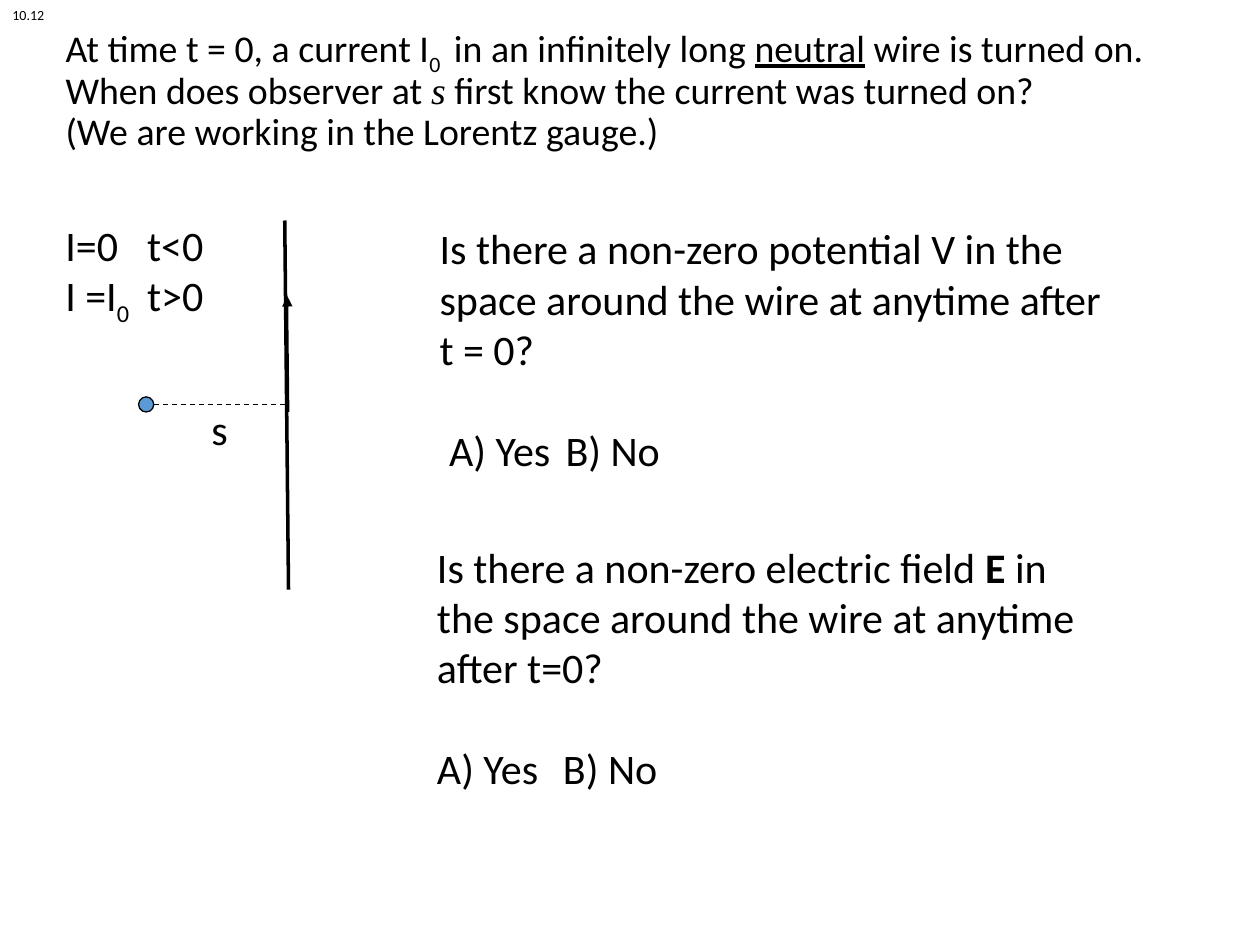
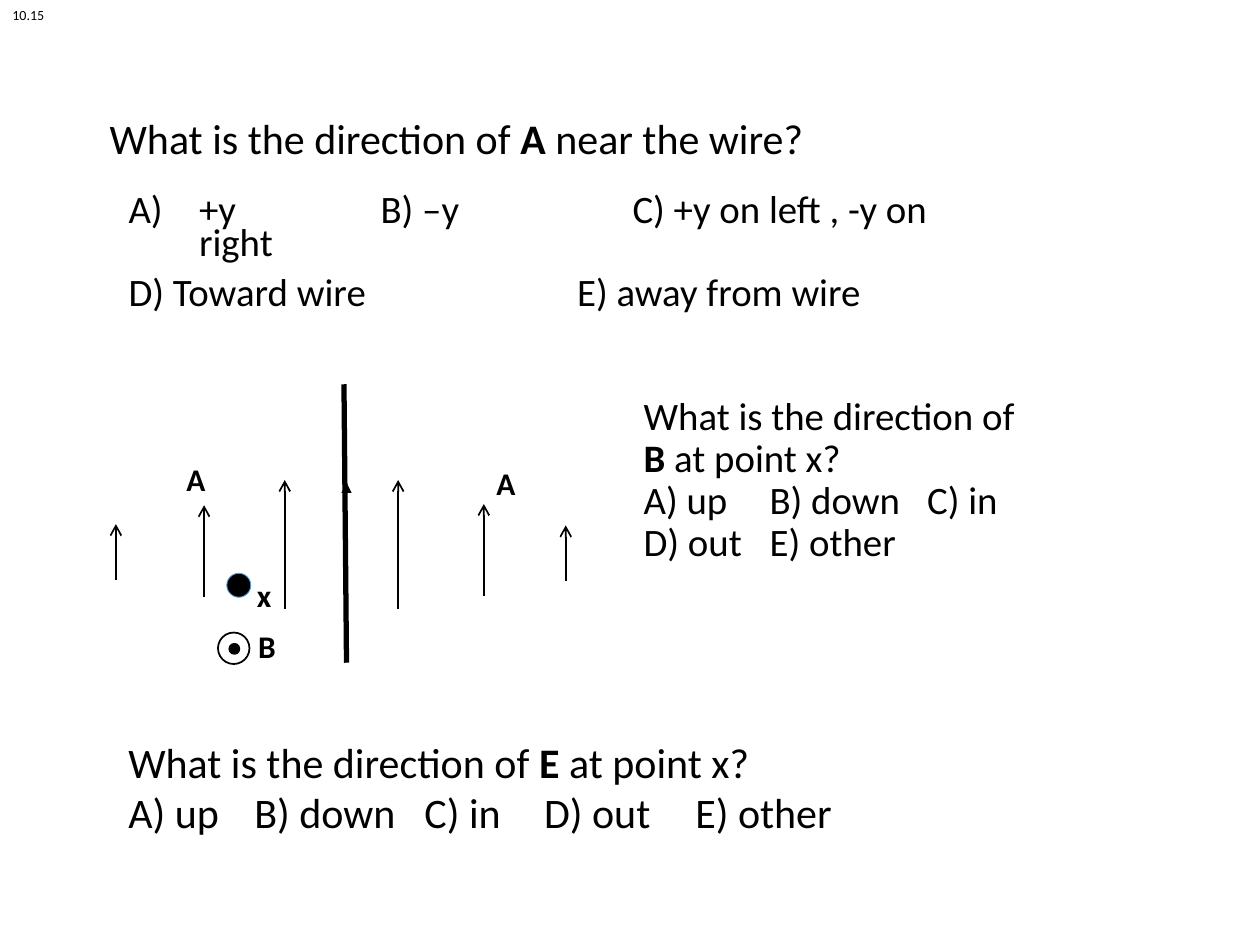
"""Build two physics concept questions about a current-carrying wire."""
from lxml.etree import SubElement
from pptx import Presentation
from pptx.dml.color import RGBColor
from pptx.enum.dml import MSO_LINE
from pptx.enum.shapes import MSO_CONNECTOR, MSO_SHAPE
from pptx.enum.text import MSO_ANCHOR, MSO_AUTO_SIZE, PP_ALIGN
from pptx.oxml.ns import qn
from pptx.util import Inches, Pt

COLORS = {"ink": "000000", "observer": "5B9BD5"}
FONT, SYMBOL_FONT = "Calibri", "Times New Roman"

GAUGE_TITLE = [[
    "At time t = 0, a current I", ("0 ", "sub"), " in an infinitely long ", ("neutral", "underline"),
    " wire is turned on. When does observer at ", ("s", "symbol"),
    " first know the current was turned on?", "\n", "(We are working in the Lorentz gauge.)",
]]
CURRENT_STEPS = [["I=0\tt<0"], ["I =I", ("0", "sub"), "\tt>0"]]
FIELD_QUESTIONS = [
    ((3.39, 1.56, 5.52, 2.42),
     ["Is there a non-zero potential V in the space around the wire at anytime after t = 0?"],
     [" A) Yes\tB) No"]),
    ((3.37, 4.14, 5.37, 2.31),
     ["Is there a non-zero electric field ", ("E", "bold"),
      " in the space around the wire at anytime after t=0?"],
     ["A) Yes\tB) No"]),
]

POTENTIAL_TITLE = [["What is the direction of ", ("A ", "bold"), "near the wire?"]]
POTENTIAL_ANSWERS = [["+y\t\tB) –y\t\tC) +y on left , -y on right"],
                     ["D) Toward wire\t\tE) away from wire"]]
B_QUESTION = [["What is the direction of ", ("B", "bold"), " at point x?"],
              ["A) up\tB) down\tC) in"], ["D) out\tE) other"]]
E_QUESTION = [["What is the direction of ", ("E", "bold"), " at point x?"],
              ["A) up\tB) down\tC) in\tD) out\tE) other"]]
VECTOR_LABELS = [("A", 1.38, 3.6, 0.35), ("A", 3.84, 3.63, 0.35),
                 ("x", 1.94, 4.52, 0.32), ("B", 1.95, 4.93, 0.3)]
POTENTIAL_ARROWS = [(0.92, 4.6, 4.16), (1.62, 4.74, 4.01), (2.26, 4.83, 3.81),
                    (3.16, 4.83, 3.81), (3.84, 4.73, 4.0), (4.49, 4.61, 4.17)]


def write(frame, paragraphs, size, spacing=None, stops=(), bold=False):
    frame.auto_size = MSO_AUTO_SIZE.NONE
    for index, parts in enumerate(paragraphs):
        paragraph = frame.paragraphs[0] if index == 0 else frame.add_paragraph()
        paragraph.alignment = PP_ALIGN.LEFT
        if spacing:
            paragraph.line_spacing = spacing
        properties = paragraph._p.get_or_add_pPr()
        properties.set("defTabSz", str(Inches(1)))
        if stops:
            tab_list = SubElement(properties, qn("a:tabLst"))
            for stop in stops:
                SubElement(tab_list, qn("a:tab"), pos=str(Inches(stop)), algn="l")
        for part in parts:
            words, style = part if isinstance(part, tuple) else (part, "")
            if words == "\n":
                paragraph.add_line_break()
                continue
            run = paragraph.add_run()
            run.text = words
            font = run.font
            font.size = Pt(size)
            font.name = SYMBOL_FONT if style == "symbol" else FONT
            font.color.rgb = RGBColor.from_string(COLORS["ink"])
            font.bold = bold or style == "bold"
            font.italic = style == "symbol"
            font.underline = style == "underline"
            if style == "sub":
                run._r.get_or_add_rPr().set("baseline", "-25000")


def add_text(slide, box, paragraphs, size, anchor=MSO_ANCHOR.TOP, wrap=True, **options):
    frame = slide.shapes.add_textbox(*map(Inches, box)).text_frame
    frame.word_wrap = wrap
    frame.vertical_anchor = anchor
    write(frame, paragraphs, size, **options)
    return frame


def fill_placeholder(placeholder, box, paragraphs, size, anchor, spacing):
    placeholder.left, placeholder.top, placeholder.width, placeholder.height = map(Inches, box)
    placeholder.text_frame.vertical_anchor = anchor
    write(placeholder.text_frame, paragraphs, size, spacing)


def add_line(slide, start, end, weight, head=None, dash=None):
    line = slide.shapes.add_connector(MSO_CONNECTOR.STRAIGHT, *map(Inches, (*start, *end)))
    line.line.color.rgb = RGBColor.from_string(COLORS["ink"])
    line.line.width = Pt(weight)
    if dash:
        line.line.dash_style = dash
    if head:
        SubElement(line.line._get_or_add_ln(), qn("a:tailEnd"), type=head)
    SubElement(line._element.spPr, qn("a:effectLst"))


def add_dot(slide, left, top, diameter, fill, outline, weight):
    dot = slide.shapes.add_shape(MSO_SHAPE.OVAL, *map(Inches, (left, top, diameter, diameter)))
    dot.shadow.inherit = False
    if fill:
        dot.fill.solid()
        dot.fill.fore_color.rgb = RGBColor.from_string(COLORS[fill])
    else:
        dot.fill.background()
    dot.line.color.rgb = RGBColor.from_string(COLORS[outline])
    dot.line.width = Pt(weight)


def start_slide(deck, layout, number, title, title_box, title_size):
    slide = deck.slides.add_slide(deck.slide_layouts[layout])
    fill_placeholder(slide.shapes.title, title_box, title, title_size, MSO_ANCHOR.MIDDLE, 0.9)
    add_text(slide, (0, 0, 0.46, 0.24), [[number]], 8, wrap=False)
    return slide


def build_gauge_slide(deck):
    slide = start_slide(deck, 5, "10.12", GAUGE_TITLE, (0.42, 0.17, 9.33, 1.08), 21.6)
    add_line(slide, (2.29, 4.68), (2.26, 1.75), 2)
    add_line(slide, (1.22, 3.21), (2.29, 3.21), 0.75, dash=MSO_LINE.DASH)
    add_dot(slide, 1.1, 3.15, 0.12, "observer", "ink", 0.75)
    add_line(slide, (2.29, 3.27), (2.28, 2.35), 1, head="triangle")
    add_text(slide, (1.58, 3.15, 0.33, 0.5), [["s"]], 24, wrap=False)
    add_text(slide, (0.42, 1.69, 1.33, 0.91), CURRENT_STEPS, 24, stops=[0.65])
    for box, question, answers in FIELD_QUESTIONS:
        frame = add_text(slide, box, [question, answers], 24, MSO_ANCHOR.MIDDLE)
        frame.paragraphs[1].space_before = Pt(29)


def build_potential_slide(deck):
    slide = start_slide(deck, 1, "10.15", POTENTIAL_TITLE, (0.77, 0.71, 6.39, 0.81), 24)
    answers = slide.placeholders[1]
    fill_placeholder(answers, (0.92, 1.52, 7.02, 1.11), POTENTIAL_ANSWERS, 22.2, MSO_ANCHOR.TOP, 0.7)
    for paragraph, bullet in zip(answers.text_frame.paragraphs, ("a:buAutoNum", "a:buNone")):
        paragraph.space_before = Pt(10)
        properties = paragraph._p.pPr
        properties.set("marL", str(Inches(0.56)))
        properties.set("indent", str(Inches(-0.56)))
        mark = SubElement(properties, qn(bullet))
        if bullet == "a:buAutoNum":
            mark.set("type", "alphaUcParenR")

    add_line(slide, (2.75, 5.26), (2.73, 3.05), 3)
    add_line(slide, (2.75, 4.61), (2.75, 3.83), 1, head="triangle")
    for x, bottom, top in POTENTIAL_ARROWS:
        add_line(slide, (x, bottom), (x, top), 1, head="arrow")
    add_dot(slide, 1.8, 4.55, 0.19, "ink", "observer", 0.5)
    add_dot(slide, 1.73, 5.02, 0.25, None, "ink", 1)
    add_dot(slide, 1.82, 5.11, 0.08, "ink", "ink", 1)
    for label, left, top, width in VECTOR_LABELS:
        add_text(slide, (left, top, width, 0.4), [[label]], 18, wrap=False, bold=True)
    add_text(slide, (5.01, 3.08, 3.34, 1.47), B_QUESTION, 22.2, MSO_ANCHOR.MIDDLE,
             spacing=0.9, stops=[1, 2.25])
    add_text(slide, (0.92, 5.51, 6.56, 1.47), E_QUESTION, 24, MSO_ANCHOR.MIDDLE,
             stops=[1, 2.35, 3.3, 4.5])


def main():
    deck = Presentation()
    deck.slide_width, deck.slide_height = Inches(10), Inches(7.5)
    build_gauge_slide(deck)
    build_potential_slide(deck)
    deck.save("out.pptx")


if __name__ == "__main__":
    main()
